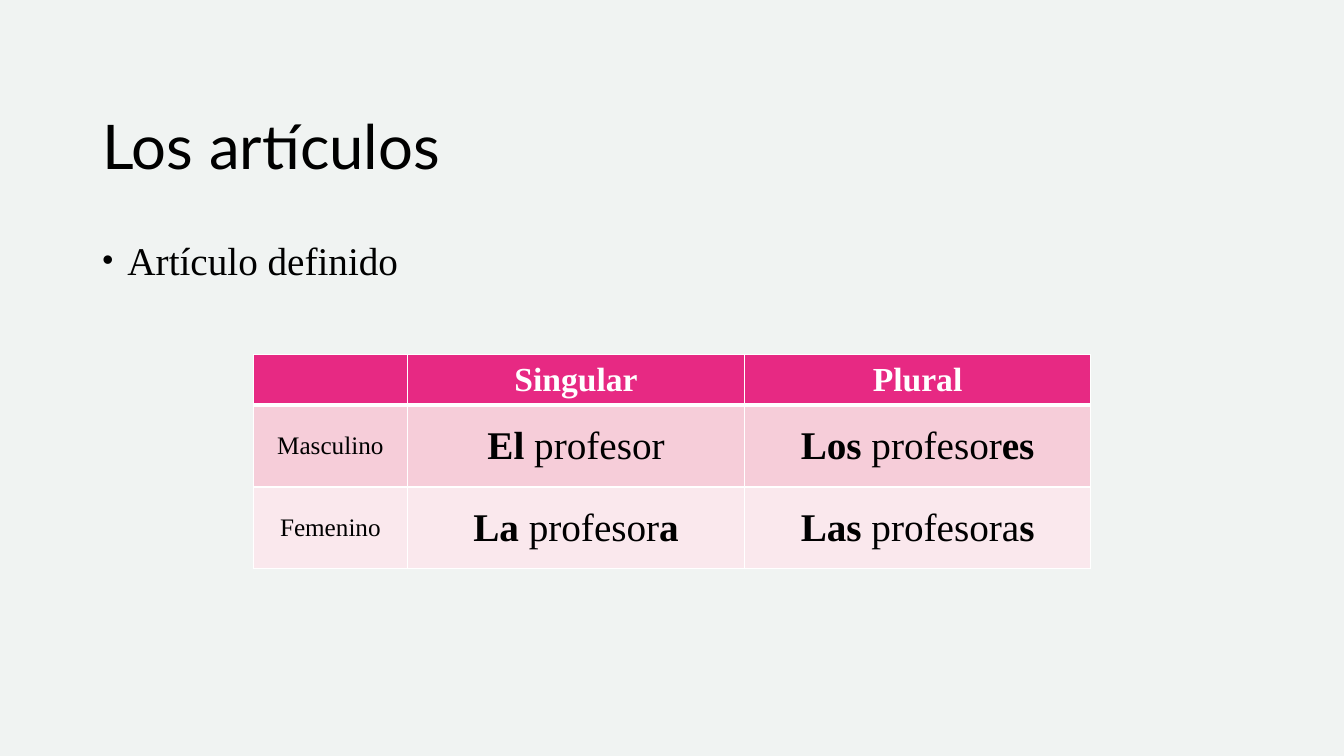
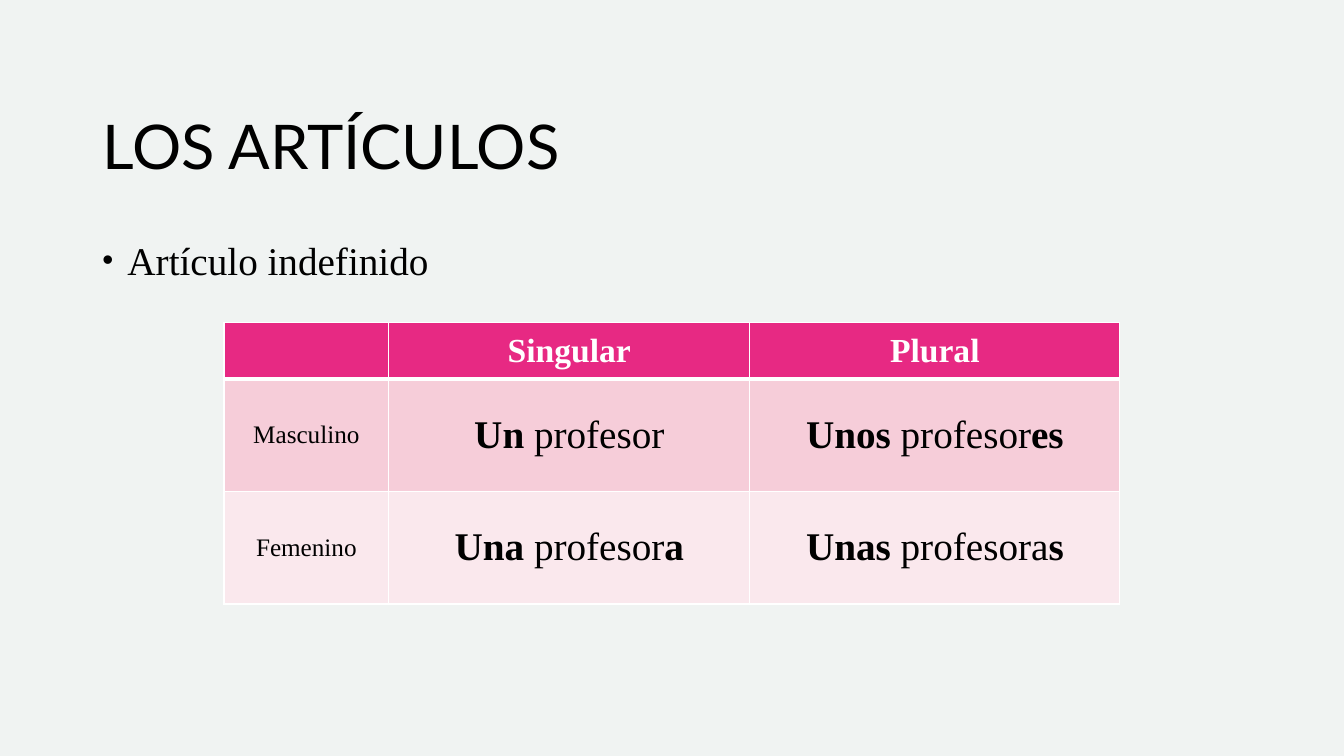
from lxml import etree
from pptx import Presentation
from pptx import util as u
from pptx.dml.color import RGBColor
from pptx.enum import text
from pptx.oxml import ns

Pt = u.Pt
WIDTH, HEIGHT = 960, 540
COLORS = {"bg": "F0F3F2", "ink": "000000", "white": "FFFFFF",
          "header": "E72983", "band_dark": "F6CDD9", "band_light": "FAE8ED"}
TITLE_FONT, BODY_FONT = "Lato", "Times New Roman"
TITLE_BOX = (66, 46, 828, 88)
BODY_BOX = (66, 162, 828, 324)
COLUMN_SHARES = (0.184, 0.403, 0.413)
HEADINGS = ["", "Singular", "Plural"]
SLIDES = [
    {"title": "Los artículos", "bullet": "Artículo definido",
     "box": (598, 253.5, 34, 58.4),
     "rows": [["Masculino", "*El* profesor", "*Los* profesor*es*"],
              ["Femenino", "*La* profesor*a*", "*Las* profesora*s*"]]},
    {"title": "LOS ARTÍCULOS", "bullet": "Artículo indefinido",
     "box": (640, 230.5, 40, 80.5),
     "rows": [["Masculino", "*Un* profesor", "*Unos* profesor*es*"],
              ["Femenino", "*Una* profesor*a*", "*Unas* profesora*s*"]]},
]


def rgb(name):
    """Return the named colour."""
    return RGBColor.from_string(COLORS[name])


def add_runs(p, marked, size, font=BODY_FONT, color="ink"):
    """Add text run by run; parts between asterisks are bold."""
    for i, part in enumerate(marked.split("*")):
        if part:
            r = p.add_run()
            r.text = part
            r.font.name, r.font.size = font, Pt(size)
            r.font.bold = i % 2 == 1
            r.font.color.rgb = rgb(color)


def add_title(s, title, box):
    """Place and format the title placeholder."""
    sp = s.shapes.title
    sp.left, sp.top, sp.width, sp.height = map(Pt, box)
    tf = sp.text_frame
    tf.auto_size = text.MSO_AUTO_SIZE.NONE
    tf.vertical_anchor = text.MSO_ANCHOR.BOTTOM
    p = tf.paragraphs[0]
    p.alignment = text.PP_ALIGN.LEFT
    p.line_spacing = 0.9
    add_runs(p, title, 44, TITLE_FONT)


def add_body(s, bullet, box):
    """Add the bulleted line below the title."""
    tf = s.shapes.add_textbox(*map(Pt, box)).text_frame
    tf.word_wrap = True
    p = tf.paragraphs[0]
    p.line_spacing, p.space_before = 1.1, Pt(10)
    pPr = p._p.get_or_add_pPr()
    pPr.set("marL", str(Pt(18)))
    pPr.set("indent", str(-Pt(18)))
    for tag, key, value in (("a:buSzPct", "val", "80000"),
                            ("a:buFont", "typeface", "Arial"),
                            ("a:buChar", "char", "•")):
        etree.SubElement(pPr, ns.qn(tag)).set(key, value)
    add_runs(p, bullet, 28)


def set_borders(cell, top, bottom):
    """Draw white cell borders, with given top and bottom widths."""
    tcPr = cell._tc.get_or_add_tcPr()
    for side, width in (("L", 1), ("R", 1), ("T", top), ("B", bottom)):
        ln = etree.SubElement(tcPr, ns.qn("a:ln" + side), w=str(Pt(width)))
        fill = etree.SubElement(ln, ns.qn("a:solidFill"))
        etree.SubElement(fill, ns.qn("a:srgbClr"), val=COLORS["white"])


def fill_cell(cell, marked, row, col):
    """Format one cell by its row and column."""
    set_borders(cell, 3 if row == 1 else 1, 3 if row == 0 else 1)
    cell.fill.solid()
    cell.fill.fore_color.rgb = rgb(("header", "band_dark", "band_light")[row])
    cell.vertical_anchor = text.MSO_ANCHOR.MIDDLE
    p = cell.text_frame.paragraphs[0]
    p.alignment = text.PP_ALIGN.CENTER
    if row == 0:
        add_runs(p, f"*{marked}*", 24, color="white")
    else:
        add_runs(p, marked, 18 if col == 0 else 28)


def add_article_table(s, rows, box):
    """Add the centred table of articles by gender and number."""
    width, top, head_h, row_h = box
    grid = [HEADINGS] + rows
    heights = [head_h] + [row_h] * len(rows)
    table = s.shapes.add_table(len(grid), len(HEADINGS), Pt((WIDTH - width) / 2),
                               Pt(top), Pt(width), Pt(sum(heights))).table
    for column, share in zip(table.columns, COLUMN_SHARES):
        column.width = Pt(width * share)
    for i, (values, height) in enumerate(zip(grid, heights)):
        table.rows[i].height = Pt(height)
        for j, value in enumerate(values):
            fill_cell(table.cell(i, j), value, i, j)


def add_article_slide(prs, content):
    """Add one slide with title, bullet and table."""
    s = prs.slides.add_slide(prs.slide_layouts[5])
    add_title(s, content["title"], TITLE_BOX)
    add_body(s, content["bullet"], BODY_BOX)
    add_article_table(s, content["rows"], content["box"])


def main():
    """Build and save the presentation."""
    prs = Presentation()
    prs.slide_width, prs.slide_height = Pt(WIDTH), Pt(HEIGHT)
    fill = prs.slide_master.background.fill
    fill.solid()
    fill.fore_color.rgb = rgb("bg")
    for content in SLIDES:
        add_article_slide(prs, content)
    prs.save("out.pptx")


if __name__ == "__main__":
    main()
